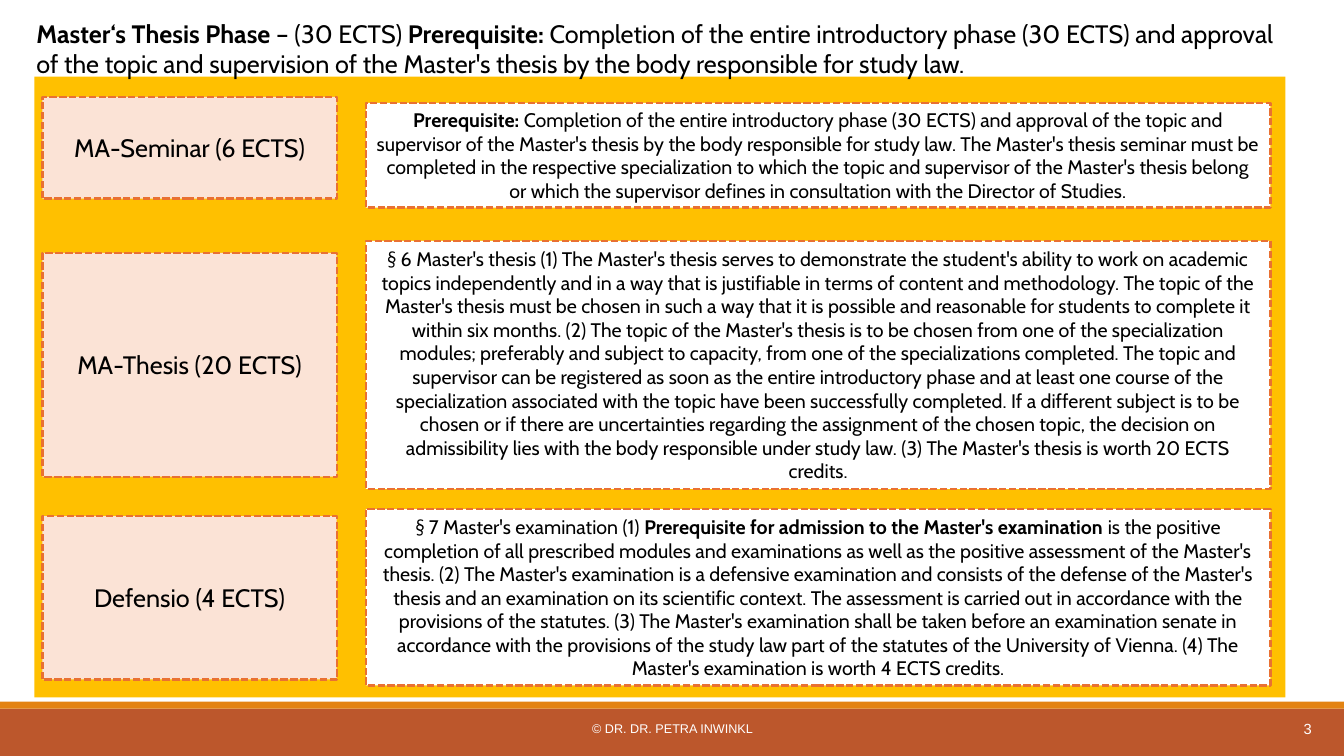
from pptx import Presentation
from pptx.dml.color import RGBColor
from pptx.enum.dml import MSO_LINE
from pptx.enum.shapes import MSO_SHAPE
from pptx.enum.text import MSO_ANCHOR, MSO_AUTO_SIZE, PP_ALIGN
from pptx.util import Inches, Pt

BLACK = RGBColor(0x00, 0x00, 0x00)
WHITE = RGBColor(0xFF, 0xFF, 0xFF)
GOLD = RGBColor(0xFF, 0xC0, 0x00)
PEACH = RGBColor(0xFB, 0xE3, 0xD6)
ORANGE = RGBColor(0xE9, 0x71, 0x32)
RUST = RGBColor(0xBC, 0x57, 0x2C)
AMBER = RGBColor(0xE3, 0x83, 0x12)

SLIDE_WIDTH, SLIDE_HEIGHT = 13.33, 7.5
LABEL_LEFT, LABEL_WIDTH = 0.08, 2.92
DETAIL_LEFT, DETAIL_WIDTH = 3.29, 8.97

TITLE = [
    ("Master‘s Thesis Phase", True),
    (" – (30 ECTS) ", False),
    ("Prerequisite: ", True),
    ("Completion of the entire introductory phase (30 ECTS) and approval of the topic and "
     "supervision of the Master's thesis by the body responsible for study law.", False),
]

SEMINAR = [
    ("Prerequisite: ", True),
    ("Completion of the entire introductory phase (30 ECTS) and approval of the topic and "
     "supervisor of the Master's thesis by the body responsible for study law. The Master's "
     "thesis seminar must be completed in the respective specialization to which the topic and "
     "supervisor of the Master's thesis belong or which the supervisor defines in consultation "
     "with the Director of Studies.", False),
]

THESIS = [
    ("§ 6 Master's thesis (1) The Master's thesis serves to demonstrate the student's ability to "
     "work on academic topics independently and in a way that is justifiable in terms of content "
     "and methodology. The topic of the Master's thesis must be chosen in such a way that it is "
     "possible and reasonable for students to complete it within six months. ", False),
    ("(2) The topic of the Master's thesis is to be chosen from one of the specialization "
     "modules; preferably and subject to capacity, from one of the specializations completed. "
     "The topic and supervisor can be registered as soon as the entire introductory phase and at "
     "least one course of the specialization associated with the topic have been successfully "
     "completed. If a different subject is to be chosen or if there are uncertainties regarding "
     "the assignment of the chosen topic, the decision on admissibility lies with the body "
     "responsible under study law. ", False),
    ("(3) The Master's thesis is worth 20 ECTS credits.", False),
]

DEFENSIO = [
    ("§ 7 Master's examination (1) ", False),
    ("Prerequisite for admission to the Master's examination ", True),
    ("is the positive completion of all prescribed modules and examinations as well as the "
     "positive assessment of the Master's thesis. (2) The Master's examination is a defensive "
     "examination and consists of the defense of the Master's thesis and an examination on its "
     "scientific context. The assessment is carried out in accordance with the provisions of the "
     "statutes. ", False),
    ("(3) The Master's examination shall be taken before an examination senate in "
     "accordance with the provisions of the study law part of the statutes of the University of "
     "Vienna. (4) The Master's examination is worth 4 ECTS credits.", False),
]

PHASES = [
    ("MA-Seminar (6 ECTS)", 0.2, 1.01, SEMINAR, 0.26, 1.04),
    ("MA-Thesis (20 ECTS)", 1.75, 2.22, THESIS, 1.63, 2.46),
    ("Defensio (4 ECTS)", 4.36, 1.62, DEFENSIO, 4.29, 1.75),
]


def write(shape, spans, size, color=BLACK, font="Cabin", align=PP_ALIGN.CENTER,
          anchor=MSO_ANCHOR.MIDDLE):
    frame = shape.text_frame
    frame.word_wrap = True
    frame.auto_size = MSO_AUTO_SIZE.NONE
    frame.vertical_anchor = anchor
    para = frame.paragraphs[0]
    para.alignment = align
    for text, bold in spans:
        span = para.add_run()
        span.text = text
        span.font.name = font
        span.font.size = Pt(size)
        span.font.bold = bold
        span.font.color.rgb = color


def add_block(page, left, top, width, height, fill):
    block = page.shapes.add_shape(
        MSO_SHAPE.RECTANGLE, Inches(left), Inches(top), Inches(width), Inches(height))
    block.shadow.inherit = False
    block.fill.solid()
    block.fill.fore_color.rgb = fill
    block.line.fill.background()
    return block


def add_dashed_box(page, left, top, width, height, fill, spans, size):
    box = add_block(page, left, top, width, height, fill)
    box.line.color.rgb = ORANGE
    box.line.width = Pt(1.75)
    box.line.dash_style = MSO_LINE.SQUARE_DOT
    write(box, spans, size)


def add_phases(page, left, top, width, height):
    add_block(page, left, top, width, height, GOLD)
    for label, label_top, label_height, detail, detail_top, detail_height in PHASES:
        add_dashed_box(page, left + LABEL_LEFT, top + label_top, LABEL_WIDTH, label_height,
                       PEACH, [(label, False)], 18)
        add_dashed_box(page, left + DETAIL_LEFT, top + detail_top, DETAIL_WIDTH, detail_height,
                       WHITE, detail, 14)


def place_title(page, left, top, width, height):
    title = page.shapes.title
    title.left, title.top = Inches(left), Inches(top)
    title.width, title.height = Inches(width), Inches(height)
    write(title, TITLE, 18, align=PP_ALIGN.LEFT, anchor=MSO_ANCHOR.TOP)
    title.element.getparent().append(title.element)


def add_footer_text(page, left, top, width, height, text, size, align):
    box = page.shapes.add_textbox(Inches(left), Inches(top), Inches(width), Inches(height))
    frame = box.text_frame
    frame.margin_left = frame.margin_right = frame.margin_top = frame.margin_bottom = 0
    write(box, [(text, False)], size, WHITE, "Arial", align)


def add_footer(page, left, top, width, height):
    stripe = 0.07
    add_block(page, left, top + stripe, width, height - stripe, RUST)
    add_block(page, left, top, width, stripe, AMBER)
    add_footer_text(page, left + 4.42, top + 0.19, 4.5, 0.15,
                    "© DR. DR. PETRA INWINKL", 9, PP_ALIGN.CENTER)
    add_footer_text(page, left + 10.01, top + stripe, 3, 0.4, "3", 10.5, PP_ALIGN.RIGHT)


def main():
    deck = Presentation()
    deck.slide_width, deck.slide_height = Inches(SLIDE_WIDTH), Inches(SLIDE_HEIGHT)
    page = deck.slides.add_slide(deck.slide_layouts[5])
    add_phases(page, 0.34, 0.76, 12.41, 6.16)
    place_title(page, 0.26, 0.13, 12.58, 0.71)
    add_footer(page, 0, 6.96, SLIDE_WIDTH, SLIDE_HEIGHT - 6.96)
    deck.save("out.pptx")


if __name__ == "__main__":
    main()
